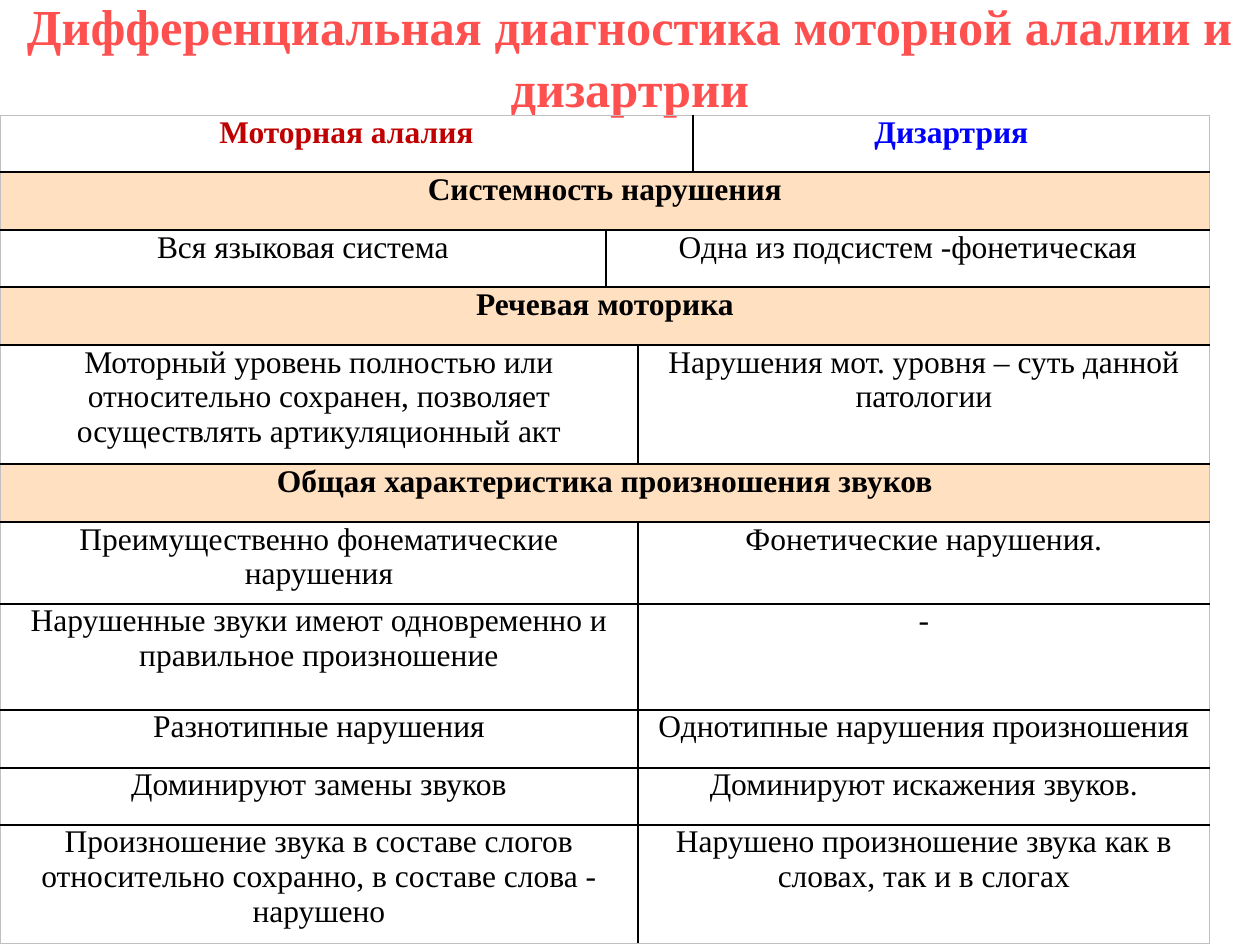
from itertools import pairwise

from lxml import etree
from pptx import Presentation
from pptx.dml.color import RGBColor
from pptx.enum.text import MSO_ANCHOR, PP_ALIGN
from pptx.oxml.ns import qn
from pptx.util import Pt

CENTER = PP_ALIGN.CENTER
TOP = MSO_ANCHOR.TOP
MIDDLE = MSO_ANCHOR.MIDDLE

EMU_PER_PX = 914400 // 126
FONT = "Times New Roman"
BLACK = RGBColor(0x00, 0x00, 0x00)
CORAL = RGBColor(0xFF, 0x50, 0x50)
CRIMSON = RGBColor(0xC0, 0x00, 0x00)
BLUE = RGBColor(0x00, 0x00, 0xFF)
PEACH = RGBColor(0xFF, 0xE0, 0xC1)
GRAY = RGBColor(0xC0, 0xC0, 0xC0)

TITLE = "Дифференциальная диагностика моторной алалии и дизартрии"
COLUMN_EDGES = [0, 606, 638, 693, 1210]
ROW_EDGES = [115, 172, 230, 287, 345, 464, 522, 604, 710, 768, 825, 944]
HEADER_SPLIT = 3
SYSTEM_SPLIT = 1
MAIN_SPLIT = 2
ROWS = [
    (HEADER_SPLIT, "Моторная алалия", "Дизартрия"),
    (None, "Системность нарушения"),
    (SYSTEM_SPLIT, "Вся языковая система", "Одна из подсистем -фонетическая"),
    (None, "Речевая моторика"),
    (MAIN_SPLIT,
     "Моторный уровень полностью или относительно сохранен, "
     "позволяет осуществлять артикуляционный акт",
     "Нарушения мот. уровня – суть данной патологии"),
    (None, "Общая характеристика произношения звуков"),
    (MAIN_SPLIT, "Преимущественно фонематические нарушения",
     "Фонетические нарушения."),
    (MAIN_SPLIT,
     "Нарушенные звуки имеют одновременно и правильное произношение", "-"),
    (MAIN_SPLIT, "Разнотипные нарушения", "Однотипные нарушения произношения"),
    (MAIN_SPLIT, "Доминируют замены звуков", "Доминируют искажения звуков."),
    (MAIN_SPLIT,
     "Произношение звука в составе слогов относительно сохранно, "
     "в составе слова - нарушено",
     "Нарушено произношение звука как в словах, так и в слогах"),
]


def px(value):
    """Convert whole pixels to EMU."""
    return value * EMU_PER_PX


def write_text(frame, text, size, color, bold):
    """Put one centred run into a text frame and return its paragraph."""
    paragraph = frame.paragraphs[0]
    paragraph.alignment = CENTER
    run = paragraph.add_run()
    run.text = text
    run.font.name = FONT
    run.font.size = Pt(size)
    run.font.bold = bold
    run.font.color.rgb = color
    return paragraph


def add_title(slide):
    """Add the centred heading above the table."""
    frame = slide.shapes.add_textbox(0, 0, px(1260), px(106)).text_frame
    frame.word_wrap = True
    frame.vertical_anchor = MIDDLE
    frame.margin_top = px(6)
    frame.margin_bottom = 0
    paragraph = write_text(frame, TITLE, 28.8, CORAL, True)
    paragraph.line_spacing = Pt(35)


def set_borders(cell, outer_sides):
    """Draw black inner borders and thin gray outer ones around a cell."""
    properties = cell._tc.get_or_add_tcPr()
    for index, side in enumerate("LRTB"):
        color, width = (GRAY, 0.5) if side in outer_sides else (BLACK, 1)
        line = etree.Element(qn(f"a:ln{side}"), w=str(Pt(width)))
        fill = etree.SubElement(line, qn("a:solidFill"))
        etree.SubElement(fill, qn("a:srgbClr"), val=str(color))
        properties.insert(index, line)


def fill_cell(table, row, start, end, text, color, bold, background):
    """Merge, fill and write the cells from start up to end in a row."""
    first = table.cell(row, start)
    if end - start > 1:
        first.merge(table.cell(row, end - 1))
    edges = {"L": start == 0, "R": end == len(table.columns),
             "T": row == 0, "B": row == len(table.rows) - 1}
    outer_sides = [side for side, is_outer in edges.items() if is_outer]
    for column in range(start, end):
        cell = table.cell(row, column)
        if background is None:
            cell.fill.background()
        else:
            cell.fill.solid()
            cell.fill.fore_color.rgb = background
        set_borders(cell, outer_sides)
    first.margin_left = first.margin_right = px(9)
    first.margin_top = first.margin_bottom = 0
    first.vertical_anchor = TOP
    write_text(first.text_frame, text, 18, color, bold)


def add_comparison_table(slide):
    """Add the table that compares the two disorders."""
    left, top = COLUMN_EDGES[0], ROW_EDGES[0]
    column_count = len(COLUMN_EDGES) - 1
    table = slide.shapes.add_table(
        len(ROWS), column_count, px(left), px(top),
        px(COLUMN_EDGES[-1] - left), px(ROW_EDGES[-1] - top)).table
    table.first_row = False
    table.horz_banding = False
    for column, (start, end) in zip(table.columns, pairwise(COLUMN_EDGES)):
        column.width = px(end - start)
    for row, (start, end) in zip(table.rows, pairwise(ROW_EDGES)):
        row.height = px(end - start)
    for row, (split, *texts) in enumerate(ROWS):
        is_section = split is None
        bounds = [0, column_count] if is_section else [0, split, column_count]
        colors = (CRIMSON, BLUE) if row == 0 else (BLACK, BLACK)
        for (start, end), text, color in zip(pairwise(bounds), texts, colors):
            fill_cell(table, row, start, end, text, color,
                      is_section or row == 0, PEACH if is_section else None)


def main():
    """Build the slide and save the presentation."""
    presentation = Presentation()
    presentation.slide_width = px(1260)
    presentation.slide_height = px(945)
    slide = presentation.slides.add_slide(presentation.slide_layouts[6])
    add_title(slide)
    add_comparison_table(slide)
    presentation.save("out.pptx")


if __name__ == "__main__":
    main()
